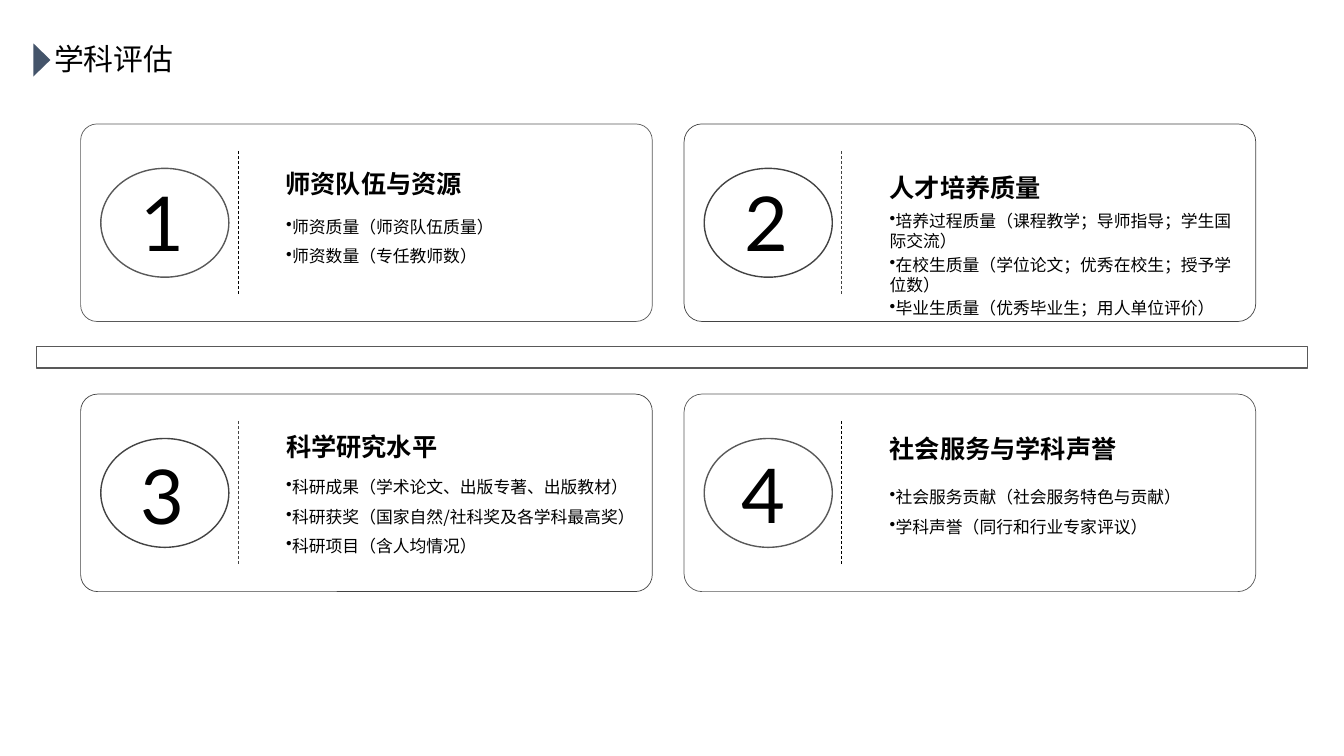
"""Build the discipline assessment slide with four numbered cards."""
import pptx
import pptx.util
import pptx.dml.color
import pptx.enum.dml
import pptx.enum.shapes
import pptx.enum.text
import pptx.oxml.ns
from lxml import etree

HEAD = "学科评估"
CARDS = [
    dict(name="师资队伍与资源", top=0.39, left=1.62, wide=2.26, high=0.4, side="RIGHT",
         list=["师资质量（师资队伍质量）", "师资数量（专任教师数）"],
         body=(0.81, 3.49, 0.67), lead=1.3, digit=(0.5, 0.47), tone="gray", dash="ink", bend=0.083),
    dict(name="人才培养质量", top=0.43, left=1.94, wide=2.13, high=0.71, side="LEFT",
         list=["培养过程质量（课程教学；导师指导；学生国际交流）",
               "在校生质量（学位论文；优秀在校生；授予学位数）",
               "毕业生质量（优秀毕业生；用人单位评价）"],
         body=(0.81, 3.73, 1.19), lead=1.0, digit=(0.5, 0.47), tone="dark", dash="dark", bend=0.091),
    dict(name="科学研究水平", top=0.32, left=1.94, wide=2.13, high=0.4, side="LEFT",
         list=["科研成果（学术论文、出版专著、出版教材）",
               "科研获奖（国家自然/社科奖及各学科最高奖）",
               "科研项目（含人均情况）"],
         body=(0.71, 3.8, 0.97), lead=1.3, digit=(0.5, 0.49), tone="dark", dash="dark", bend=0.086),
    dict(name="社会服务与学科声誉", top=0.34, left=1.94, wide=2.76, high=0.4, side="LEFT",
         list=["社会服务贡献（社会服务特色与贡献）", "学科声誉（同行和行业专家评议）"],
         body=(0.81, 3.49, 0.67), lead=1.3, digit=(0.47, 0.48), tone="gray", dash="ink", bend=0.091),
]
THEME = dict(
    ink="000000", gray="595959", dark="434343", mark="44546A",
    head=dict(size=21.3, name="Lato"),
    digit=dict(size=54, name="Lato"),
    name=dict(size=18, name="Noto Sans CJK SC", bold=True),
    list=dict(size=12, name="Noto Sans CJK SC"),
)
GRID = dict(left=0.8, top=1.23, across=5.985, down=2.68, wide=5.67, high=1.96)

inch, point = pptx.util.Inches, pptx.util.Pt
KIND = pptx.enum.shapes.MSO_SHAPE
ALIGN = pptx.enum.text.PP_ALIGN


def hue(key):
    return pptx.dml.color.RGBColor.from_string(THEME[key])


def draw(slide, kind, box, line=None, width=1, fill=None):
    shape = slide.shapes.add_shape(kind, *map(inch, box))
    shape.shadow.inherit = False
    for part, key in ((shape.fill, fill), (shape.line.fill, line)):
        if key:
            part.solid()
            part.fore_color.rgb = hue(key)
        else:
            part.background()
    if line:
        shape.line.width = point(width)
    return shape


def rule(slide, x, top, end, key):
    line = slide.shapes.add_connector(
        pptx.enum.shapes.MSO_CONNECTOR.STRAIGHT, *map(inch, (x, top, x, end)))
    line.line.color.rgb = hue(key)
    line.line.width = point(0.5)
    line.line.dash_style = pptx.enum.dml.MSO_LINE.DASH
    etree.SubElement(line.element.spPr, pptx.oxml.ns.qn("a:effectLst"))


def write(slide, box, lines, style, wrap=True, side="LEFT", lead=1.0, dot=False):
    frame = slide.shapes.add_textbox(*map(inch, box)).text_frame
    frame.word_wrap = wrap
    frame.auto_size = pptx.enum.text.MSO_AUTO_SIZE.SHAPE_TO_FIT_TEXT
    form = THEME[style]
    for rank, text in enumerate(lines):
        para = frame.add_paragraph() if rank else frame.paragraphs[0]
        para.alignment = ALIGN[side]
        para.line_spacing = lead
        if rank:
            para.space_before = point(form["size"] * 0.2)
        if dot:
            mark = etree.SubElement(para._p.get_or_add_pPr(), pptx.oxml.ns.qn("a:buChar"))
            mark.set("char", "•")
        run = para.add_run()
        run.text = text
        for key, value in form.items():
            setattr(run.font, key, point(value) if key == "size" else value)
        run.font.color.rgb = hue("ink")
        east = etree.SubElement(run._r.get_or_add_rPr(), pptx.oxml.ns.qn("a:ea"))
        east.set("typeface", form["name"])


def card(slide, rank, data):
    row, col = divmod(rank, 2)
    x = GRID["left"] + col * GRID["across"]
    y = GRID["top"] + row * GRID["down"]
    frame = draw(slide, KIND.ROUNDED_RECTANGLE, (x, y, GRID["wide"], GRID["high"]),
                 data["tone"], 0.5)
    frame.adjustments[0] = data["bend"]
    rule(slide, x + 1.56, y + 0.27, y + 1.7, data["dash"])
    write(slide, (x + data["left"], y + data["top"], data["wide"], data["high"]),
          [data["name"]], "name", side=data["side"])
    drop, wide, high = data["body"]
    write(slide, (x + 1.94, y + drop, wide, high), data["list"], "list",
          lead=data["lead"], dot=True)
    draw(slide, KIND.OVAL, (x + 0.2, y + 0.44, 1.27, 1.08), data["tone"])
    right, down = data["digit"]
    write(slide, (x + right, y + down, 0.68, 1.01), [str(rank + 1)], "digit", wrap=False)


def main():
    deck = pptx.Presentation()
    deck.slide_width, deck.slide_height = inch(13.33), inch(7.5)
    slide = deck.slides.add_slide(deck.slide_layouts[6])
    draw(slide, KIND.RECTANGLE, (0.36, 3.44, 12.61, 0.21), "gray")
    for rank, data in enumerate(CARDS):
        card(slide, rank, data)
    write(slide, (0.44, 0.36, 1.4, 0.46), [HEAD], "head", wrap=False)
    draw(slide, KIND.ISOSCELES_TRIANGLE, (0.25, 0.51, 0.33, 0.17), fill="mark").rotation = 90
    deck.save("out.pptx")


if __name__ == "__main__":
    main()
